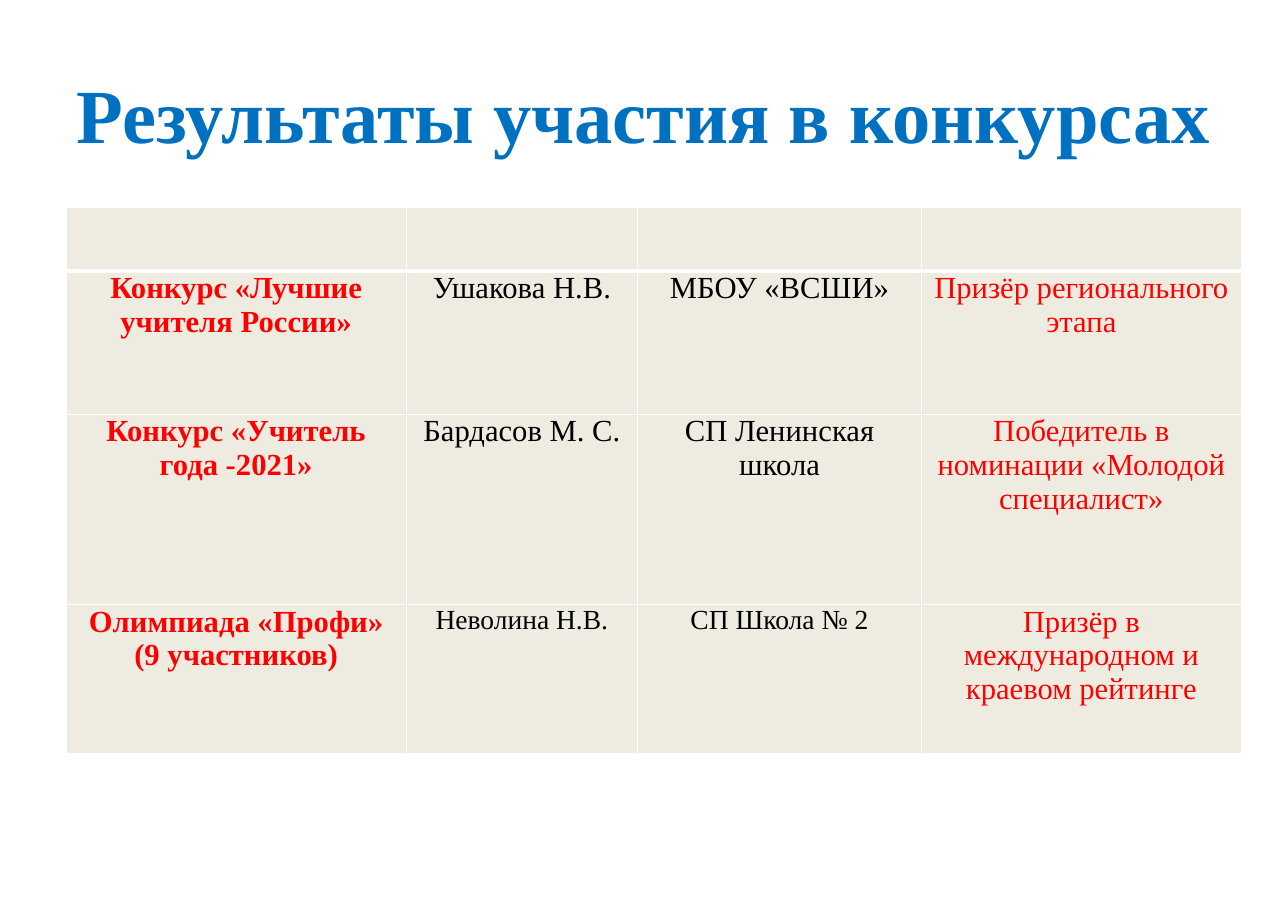
"""Build a slide with a table of contest results."""
from lxml import etree
from pptx import Presentation
from pptx.dml.color import RGBColor
from pptx.enum.text import MSO_ANCHOR, PP_ALIGN
from pptx.oxml.ns import qn
from pptx.util import Cm, Pt

TITLE = "Результаты участия в конкурсах"
ROWS = [
    ("", "", "", ""),
    ("Конкурс «Лучшие учителя России»", "Ушакова Н.В.", "МБОУ «ВСШИ»",
     "Призёр регионального этапа"),
    ("Конкурс «Учитель года -2021»", "Бардасов М. С.", "СП Ленинская школа",
     "Победитель в номинации «Молодой специалист»"),
    ("Олимпиада «Профи»\n(9 участников)", "Неволина Н.В.", "СП Школа № 2",
     "Призёр в международном и краевом рейтинге"),
]
WIDTHS = (7.85, 5.33, 6.55, 7.37)
HEIGHTS = (1.47, 3.3, 4.39, 3.43)

FONT = "Times New Roman"
BLUE = RGBColor(0x00, 0x70, 0xC0)
RED = RGBColor(0xFF, 0x00, 0x00)
BLACK = RGBColor(0x00, 0x00, 0x00)
CREAM = RGBColor(0xEE, 0xEC, 0xE1)
CENTER = PP_ALIGN.CENTER
MIDDLE = MSO_ANCHOR.MIDDLE
TOP = MSO_ANCHOR.TOP


def write(frame, text, size, color, bold):
    """Fill a frame with centred paragraphs, one run each."""
    for i, line in enumerate(text.split("\n")):
        para = frame.paragraphs[0] if i == 0 else frame.add_paragraph()
        para.alignment = CENTER
        run = para.add_run()
        run.text = line
        font = run.font
        font.name, font.size, font.bold = FONT, Pt(size), bold
        font.color.rgb = color


def border(cell, sides):
    """Draw white cell edges of the given widths in points."""
    props = cell._tc.get_or_add_tcPr()
    for i, (side, width) in enumerate(sides.items()):
        line = etree.Element(qn("a:ln" + side), w=str(Pt(width)))
        fill = etree.SubElement(line, qn("a:solidFill"))
        etree.SubElement(fill, qn("a:srgbClr"), val="FFFFFF")
        props.insert(i, line)


def add_title(slide):
    """Add the heading."""
    box = slide.shapes.add_textbox(Cm(1.47), Cm(0.84), Cm(26.75), Cm(3.51))
    frame = box.text_frame
    frame.word_wrap = True
    frame.vertical_anchor = MIDDLE
    write(frame, TITLE, 50, BLUE, True)


def add_grid(slide):
    """Add the table of results."""
    grid = slide.shapes.add_table(
        len(ROWS), len(WIDTHS), Cm(1.52), Cm(4.78),
        Cm(sum(WIDTHS)), Cm(sum(HEIGHTS))).table
    grid.first_row = grid.horz_banding = False
    for col, width in zip(grid.columns, WIDTHS):
        col.width = Cm(width)
    for row, height in zip(grid.rows, HEIGHTS):
        row.height = Cm(height)
    last = len(ROWS) - 1
    for r, texts in enumerate(ROWS):
        for c, text in enumerate(texts):
            cell = grid.cell(r, c)
            cell.fill.solid()
            cell.fill.fore_color.rgb = CREAM
            cell.vertical_anchor = TOP
            cell.margin_left = cell.margin_right = Cm(0.18)
            cell.margin_top = cell.margin_bottom = 0
            border(cell, {"L": 1, "R": 1, "T": 3 if r == 1 else 1,
                          "B": 3 if r == 0 else 1})
            if text:
                inner = c in (1, 2)
                size = 18 if inner and r == last else 20
                write(cell.text_frame, text, size,
                      BLACK if inner else RED, c == 0)


def main():
    """Build and save the slide."""
    deck = Presentation()
    deck.slide_width, deck.slide_height = Cm(29.7), Cm(20.98)
    slide = deck.slides.add_slide(deck.slide_layouts[6])
    add_title(slide)
    add_grid(slide)
    deck.save("out.pptx")


if __name__ == "__main__":
    main()
